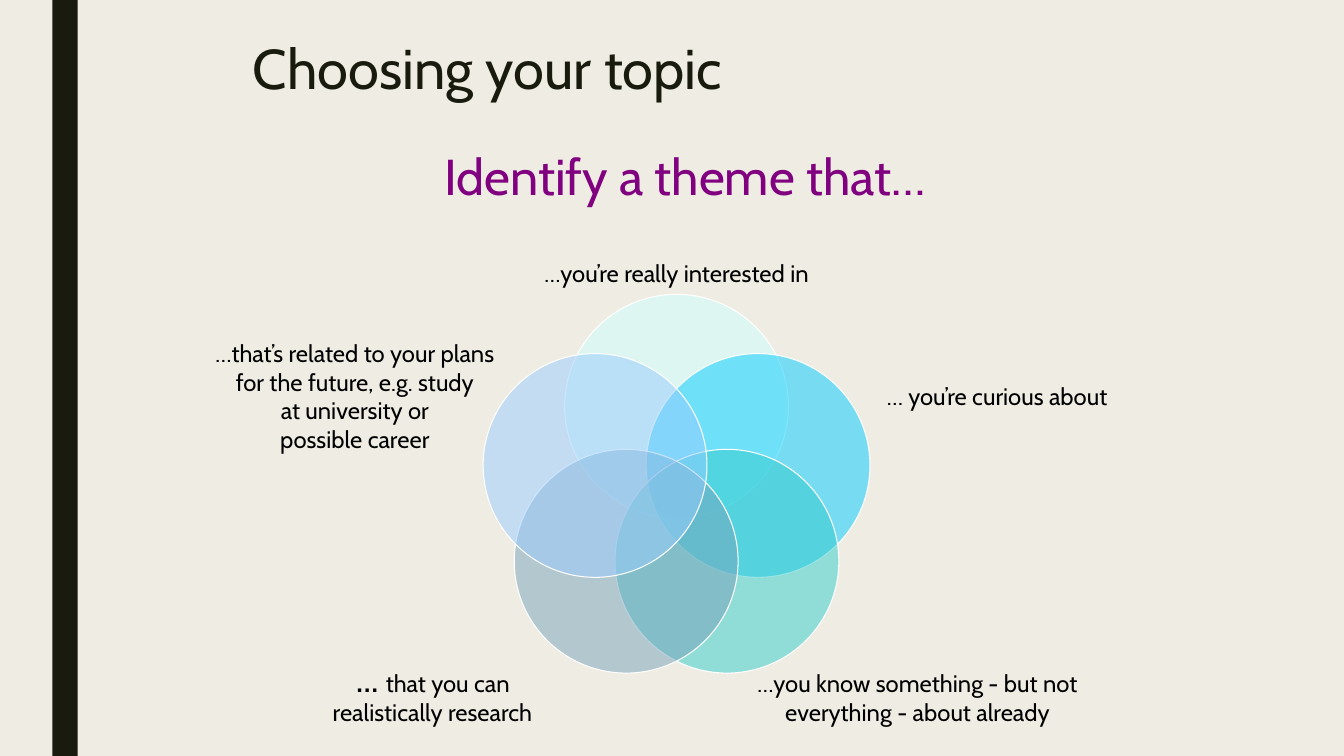
import math

import pptx
import pptx.dml.color
import pptx.enum.shapes
import pptx.enum.text
import pptx.util
from lxml import etree
from pptx.oxml.ns import qn

PX = 9144  # EMU per px, 100 px to the inch
FONT = "Cabin"
INK = "191B0E"
VENN_CENTER = (671, 488)
VENN_RADIUS = 85
CIRCLE_SIZE = 222
LABEL_HEIGHT = 56

# Circle colour, label left, label top, label lines (clockwise from the top)
THEMES = [
    ("CCFFFF", 560, 243, ["…you’re really interested in"]),
    ("00CCFF", 878, 365, ["… you’re curious about"]),
    ("33CCCC", 799, 664, ["…you know something - but not",
                          "everything - about already"]),
    ("77A2BB", 318, 664, ["… that you can", "realistically research"]),
    ("99CCFF", 241, 365, ["…that’s related to your plans",
                          "for the future, e.g. study",
                          "at university or", "possible career"]),
]
BOLD_LEAD_THEME = 3  # its opening ellipsis is bold Arial


def color(hex_value):
    return pptx.dml.color.RGBColor.from_string(hex_value)


def box(*lengths):
    return [round(length * PX) for length in lengths]


def style(font, size, hex_value, name=FONT, bold=False):
    font.name = name
    font.size = pptx.util.Pt(size)
    font.bold = bold
    font.color.rgb = color(hex_value)


def add_shape(slide, kind, bounds, fill=None, alpha=None, line=None):
    shape = slide.shapes.add_shape(kind, *box(*bounds))
    shape.shadow.inherit = False
    if fill:
        shape.fill.solid()
        shape.fill.fore_color.rgb = color(fill)
    else:
        shape.fill.background()
    if alpha is not None:
        tint = shape.fill._xPr.find(qn("a:solidFill"))[0]
        etree.SubElement(tint, qn("a:alpha")).set("val", str(alpha * 1000))
    if line:
        shape.line.color.rgb = color(line)
        shape.line.width = pptx.util.Pt(0.75)
    else:
        shape.line.fill.background()
    return shape


def add_heading(slide, bounds, text, size, hex_value, wrap):
    frame = slide.shapes.add_textbox(*box(*bounds)).text_frame
    frame.word_wrap = wrap
    heading = frame.paragraphs[0]
    heading.text = text
    style(heading.font, size, hex_value)
    return heading


def add_label(slide, left, top, lines, bold_lead=False):
    # An unfilled rectangle lets long lines run past its sides unwrapped
    frame = add_shape(slide, pptx.enum.shapes.MSO_SHAPE.RECTANGLE,
                      (left, top, CIRCLE_SIZE, LABEL_HEIGHT)).text_frame
    frame.word_wrap = False
    frame.vertical_anchor = pptx.enum.text.MSO_ANCHOR.MIDDLE
    frame.margin_left = frame.margin_right = 0
    frame.margin_top = frame.margin_bottom = 0
    for index, line in enumerate(lines):
        paragraph = frame.paragraphs[0] if index == 0 else frame.add_paragraph()
        paragraph.alignment = pptx.enum.text.PP_ALIGN.CENTER
        if bold_lead and index == 0:
            lead, rest = paragraph.add_run(), paragraph.add_run()
            lead.text, rest.text = line[:2], line[2:]
            style(lead.font, 17, "000000", "Arial", True)
            style(rest.font, 17, "000000")
        else:
            paragraph.text = line
            style(paragraph.font, 17, "000000")


def add_venn(slide):
    for index, (fill, left, top, lines) in enumerate(THEMES):
        angle = math.tau * index / len(THEMES)
        x = VENN_CENTER[0] + VENN_RADIUS * math.sin(angle) - CIRCLE_SIZE / 2
        y = VENN_CENTER[1] - VENN_RADIUS * math.cos(angle) - CIRCLE_SIZE / 2
        add_shape(slide, pptx.enum.shapes.MSO_SHAPE.OVAL,
                  (x, y, CIRCLE_SIZE, CIRCLE_SIZE), fill, 50, "FFFFFF")
        add_label(slide, left, top, lines, index == BOLD_LEAD_THEME)


def main():
    deck = pptx.Presentation()
    deck.slide_width, deck.slide_height = box(1333, 750)
    slide = deck.slides.add_slide(deck.slide_layouts[6])

    # Background and side bar
    slide.background.fill.solid()
    slide.background.fill.fore_color.rgb = color("EFEDE3")
    add_shape(slide, pptx.enum.shapes.MSO_SHAPE.RECTANGLE,
              (52, 0, 25, 750), INK)

    # Headings
    title = add_heading(slide, (241, 36, 900, 94), "Choosing your topic",
                        40, INK, True)
    title.line_spacing = 0.89
    add_heading(slide, (431, 139, 501, 71), "Identify a theme that…",
                36, "800080", False)

    # Overlapping themes
    add_venn(slide)
    deck.save("out.pptx")


if __name__ == "__main__":
    main()
